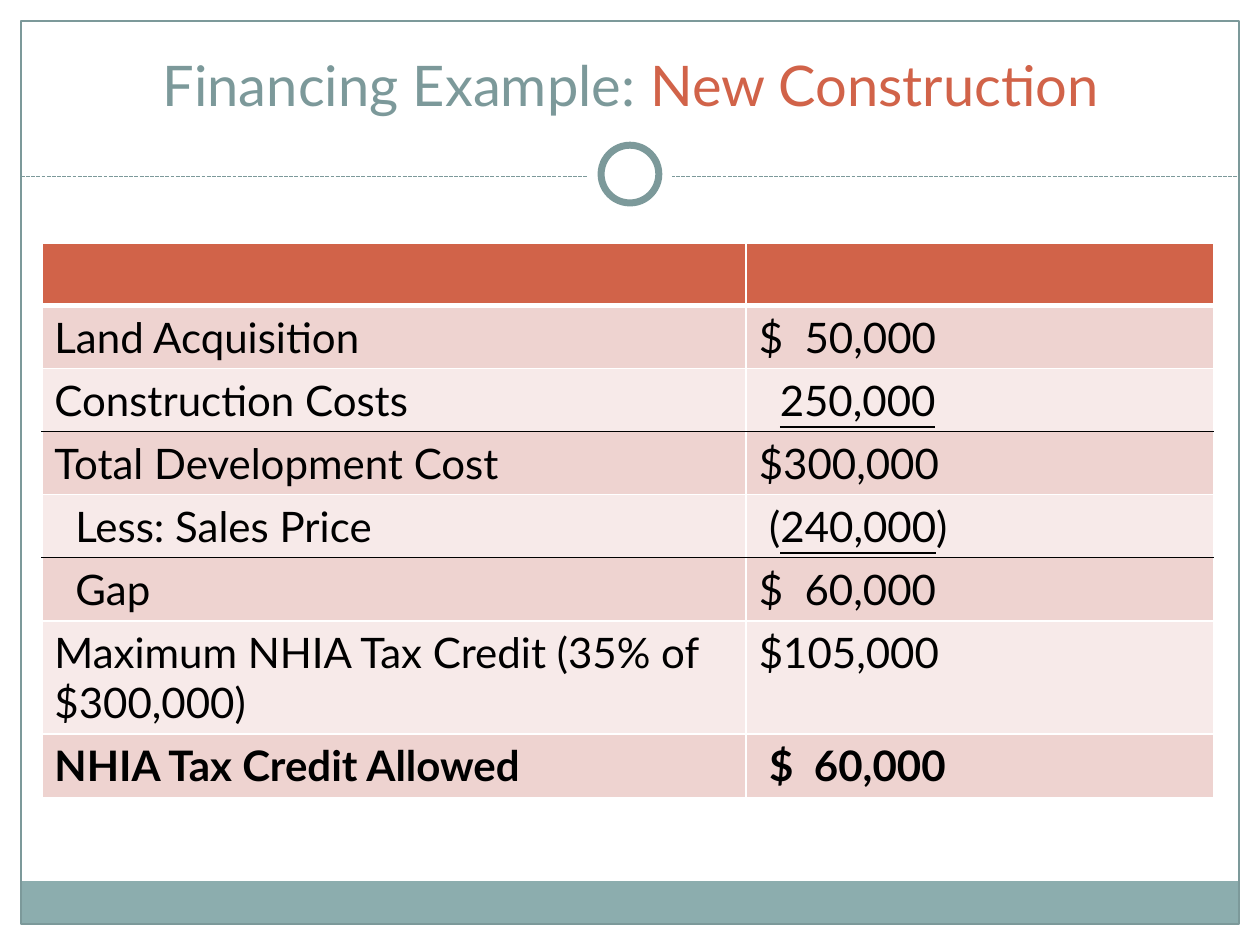
from lxml import etree
from pptx import Presentation
from pptx.dml.color import RGBColor
from pptx.enum import dml, shapes, text
from pptx.oxml.ns import qn
from pptx.util import Pt

THEME = dict(teal="7C999A", bar="8CADAE", rust="D16349", white="FFFFFF",
             black="000000", dark="EED3D0", light="F7EAE9",
             font="Lato", head=32, body=24)

TITLE = [("Financing Example: ", "teal"), ("New Construction", "rust")]

# label, label indent, amount runs (text, underlined), amount indent
ROWS = [
    ("Land Acquisition", 0, [("$  50,000", False)], 0),
    ("Construction Costs", 0, [("250,000", True)], 2),
    ("Total Development Cost", 0, [("$300,000", False)], 0),
    ("Less: Sales Price", 2, [("(", False), ("240,000", True), (")", False)], 1),
    ("Gap", 2, [("$  60,000", False)], 0),
    ("Maximum NHIA Tax Credit (35% of $300,000)", 0, [("$105,000", False)], 0),
    ("NHIA Tax Credit Allowed", 0, [("$  60,000", False)], 1),
]
RULED = (2, 4)      # table rows with a black rule below
BOLD = len(ROWS)    # last table row
COLS = (402.5, 267.1)
ROW, PAD, STEP = 35.4, 7.2, 6

W, H, EDGE = 720, 540, 12
RULE_Y, MID_Y = 100.8, 99.5


def rgb(key):
    return RGBColor.from_string(THEME[key])


def shape(kind, x, y, w, h, fill=None, line=None, width=0.75):
    s = slide.shapes.add_shape(kind, Pt(x), Pt(y), Pt(w), Pt(h))
    s.shadow.inherit = False
    if fill:
        s.fill.solid()
        s.fill.fore_color.rgb = rgb(fill)
    else:
        s.fill.background()
    if line:
        s.line.color.rgb = rgb(line)
        s.line.width = Pt(width)
    else:
        s.line.fill.background()


def disc(size, **look):
    shape(shapes.MSO_SHAPE.OVAL, (W - size) / 2, MID_Y - size / 2,
          size, size, **look)


def write(para, words, color, size, **form):
    run = para.add_run()
    run.text = words
    form = dict(name=THEME["font"], size=Pt(THEME[size]), **form)
    for key, value in form.items():
        setattr(run.font, key, value)
    run.font.color.rgb = rgb(color)


def border(cell, side, color, width):
    props = cell._tc.get_or_add_tcPr()
    line = etree.SubElement(props, qn(f"a:ln{side}"), w=str(Pt(width)))
    fill = etree.SubElement(line, qn("a:solidFill"))
    etree.SubElement(fill, qn("a:srgbClr"), val=THEME[color])


def style(cell, row):
    """Draw the borders first, as the fill must follow them in the XML."""
    top = "black" if row - 1 in RULED else "white"
    low = "black" if row in RULED else "white"
    border(cell, "L", "white", 1)
    border(cell, "R", "white", 1)
    border(cell, "T", top, 3 if row == 1 else 1)
    border(cell, "B", low, 3 if row == 0 else 1)
    cell.fill.solid()
    cell.fill.fore_color.rgb = rgb("rust" if row == 0 else
                                   "dark" if row % 2 else "light")


deck = Presentation()
deck.slide_width, deck.slide_height = Pt(W), Pt(H)
slide = deck.slides.add_slide(deck.slide_layouts[6])

# Frame, bottom bar, dashed rule and ring
BOX = shapes.MSO_SHAPE.RECTANGLE
shape(BOX, EDGE, 503.5, W - 2 * EDGE, 24.5, fill="bar")
shape(BOX, EDGE, EDGE, W - 2 * EDGE, H - 2 * EDGE, line="teal")
rule = slide.shapes.add_connector(shapes.MSO_CONNECTOR.STRAIGHT, Pt(EDGE),
                                  Pt(RULE_Y), Pt(W - EDGE), Pt(RULE_Y))
rule.line.color.rgb = rgb("teal")
rule.line.width = Pt(0.75)
rule.line.dash_style = dml.MSO_LINE.SQUARE_DOT
etree.SubElement(rule._element.spPr, qn("a:effectLst"))
disc(48, fill="white")
disc(33, fill="white", line="teal", width=4)

# Title
frame = slide.shapes.add_textbox(Pt(18), Pt(18), Pt(685), Pt(60)).text_frame
frame.word_wrap = True
frame.vertical_anchor = text.MSO_ANCHOR.MIDDLE
head = frame.paragraphs[0]
head.alignment = text.PP_ALIGN.CENTER
for words, color in TITLE:
    write(head, words, color, "head")

# Table
grid = slide.shapes.add_table(len(ROWS) + 1, len(COLS), Pt(23.9), Pt(139.2),
                              Pt(sum(COLS)), Pt(ROW * (len(ROWS) + 1))).table
grid.first_row = grid.horz_banding = False
for col, width in zip(grid.columns, COLS):
    col.width = Pt(width)
for r, row in enumerate(grid.rows):
    row.height = Pt(ROW)
    for cell in row.cells:
        style(cell, r)
for r, (label, inset, amount, shift) in enumerate(ROWS, 1):
    for c, (runs, dent) in enumerate([([(label, False)], inset),
                                      (amount, shift)]):
        cell = grid.cell(r, c)
        cell.margin_left = Pt(PAD + STEP * dent)
        for words, under in runs:
            write(cell.text_frame.paragraphs[0], words, "black", "body",
                  underline=under, bold=r == BOLD)

deck.save("out.pptx")
